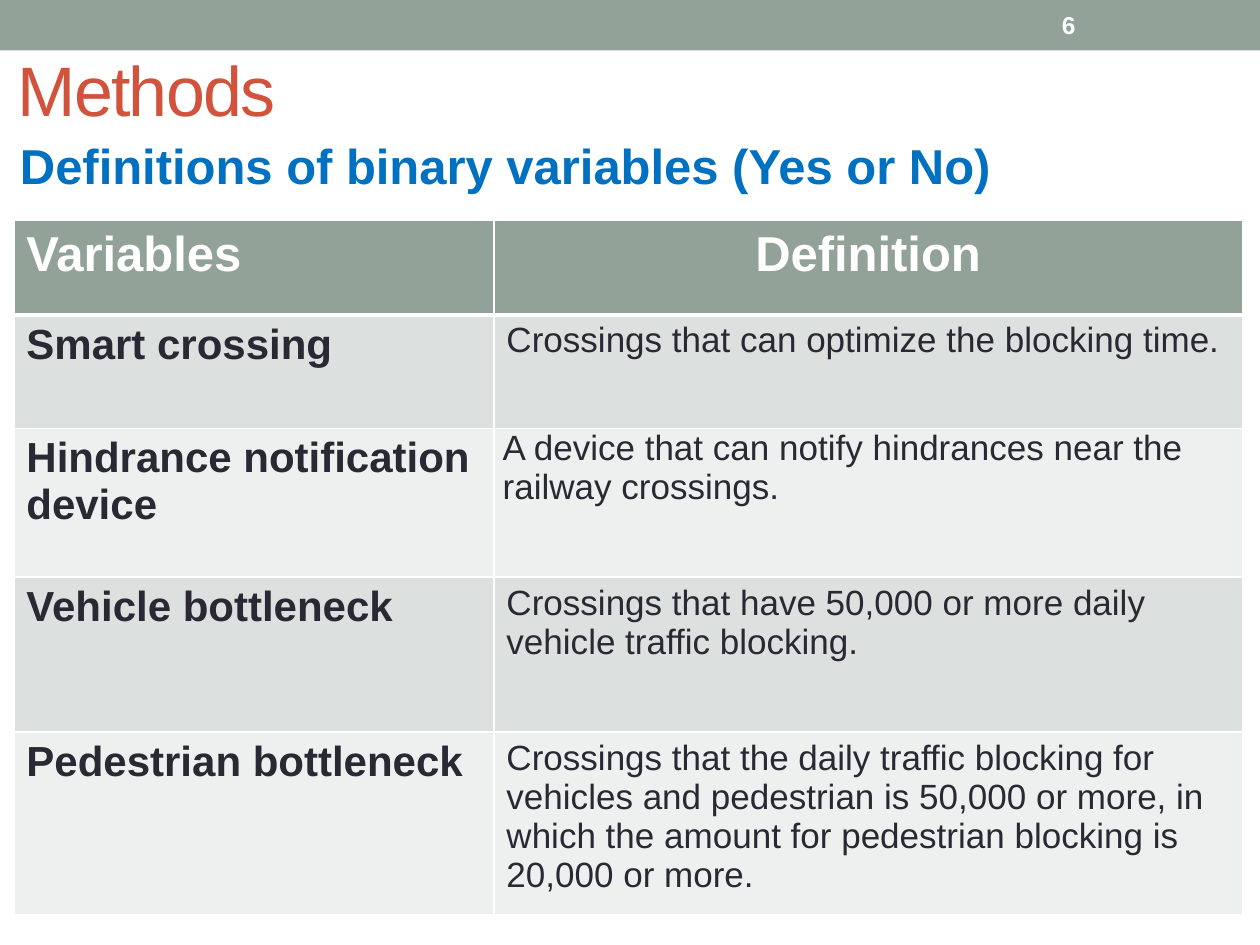
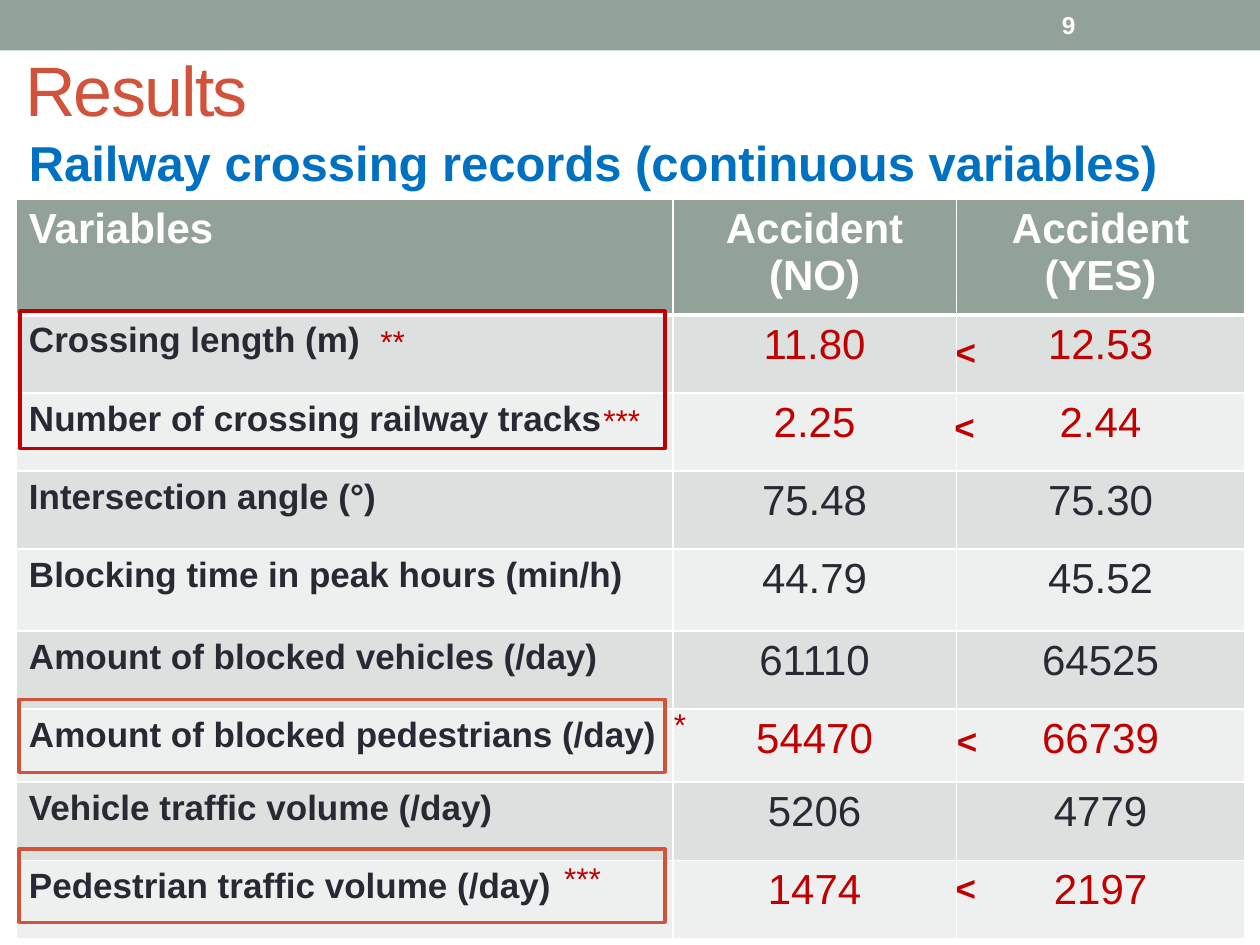
from dataclasses import dataclass

from lxml.etree import SubElement
from pptx import Presentation
from pptx.dml.color import RGBColor
from pptx.enum.shapes import MSO_SHAPE as Shape
from pptx.enum.text import MSO_ANCHOR as Anchor, MSO_AUTO_SIZE as AutoSize, PP_ALIGN as Align
from pptx.oxml.ns import qn
from pptx.util import Inches, Pt

FONT = "Arial"
SAGE, RUST, BLUE, RED = "93A299", "D2533C", "0070C0", "C00000"
INK, WHITE = "292934", "FFFFFF"
ROW_FILLS = ("EEF0EF", "DCE0DE")


@dataclass(frozen=True)
class Box:
    left: float
    top: float
    width: float
    height: float

    def emu(self) -> tuple:
        return tuple(Inches(v) for v in (self.left, self.top, self.width, self.height))


@dataclass(frozen=True)
class Style:
    size: float
    color: str
    bold: bool = False
    align: Align = Align.LEFT


@dataclass(frozen=True)
class Column:
    width: float
    header: Style
    body: Style


@dataclass(frozen=True)
class Mark:
    text: str
    box: Box
    style: Style


@dataclass(frozen=True)
class Frame:
    color: str
    box: Box


def rgb(color: str) -> RGBColor:
    return RGBColor.from_string(color)


def write(tf, text: str, style: Style) -> None:
    tf.text = text
    for p in tf.paragraphs:
        p.alignment = style.align
        for r in p.runs:
            r.font.name = FONT
            r.font.size = Pt(style.size)
            r.font.bold = style.bold
            r.font.color.rgb = rgb(style.color)


def add_text(slide, text: str, box: Box, style: Style, anchor: Anchor = Anchor.TOP) -> None:
    tf = slide.shapes.add_textbox(*box.emu()).text_frame
    tf.word_wrap = True
    tf.vertical_anchor = anchor
    write(tf, text, style)


def add_rect(slide, box: Box, fill: str = "", line: str = "") -> None:
    sp = slide.shapes.add_shape(Shape.RECTANGLE, *box.emu())
    sp.shadow.inherit = False
    if fill:
        sp.fill.solid()
        sp.fill.fore_color.rgb = rgb(fill)
    else:
        sp.fill.background()
    if line:
        sp.line.color.rgb = rgb(line)
        sp.line.width = Pt(2)
    else:
        sp.line.fill.background()


def set_borders(cell, top: float, bottom: float) -> None:
    tc_pr = cell._tc.get_or_add_tcPr()
    widths = {"a:lnL": 1, "a:lnR": 1, "a:lnT": top, "a:lnB": bottom}
    for i, (tag, width) in enumerate(widths.items()):
        ln = SubElement(tc_pr, qn(tag), w=str(Pt(width)))
        fill = SubElement(ln, qn("a:solidFill"))
        SubElement(fill, qn("a:srgbClr"), val=WHITE)
        tc_pr.insert(i, ln)


def add_table(slide, left: float, top: float, columns: list[Column], heights: list[float],
              rows: list[tuple], red_rows: tuple = ()):
    box = Box(left, top, sum(c.width for c in columns), sum(heights))
    table = slide.shapes.add_table(len(rows), len(columns), *box.emu()).table
    table.horz_banding = False
    for col, column in zip(table.columns, columns):
        col.width = Inches(column.width)
    for i, (height, row) in enumerate(zip(heights, rows)):
        table.rows[i].height = Inches(height)
        for j, (column, text) in enumerate(zip(columns, row)):
            cell = table.cell(i, j)
            style = column.body if i else column.header
            if i in red_rows and j:
                style = Style(style.size, RED, style.bold, style.align)
            write(cell.text_frame, text, style)
            cell.fill.solid()
            cell.fill.fore_color.rgb = rgb(ROW_FILLS[i % 2] if i else SAGE)
            set_borders(cell, 3 if i == 1 else 1, 1 if i else 3)
    return table


def add_slide(prs, number: str, title: str, title_box: Box, subtitle: str, subtitle_box: Box):
    slide = prs.slides.add_slide(prs.slide_layouts.get_by_name("Title Only"))
    add_rect(slide, Box(0, 0, 10, 0.4), fill=SAGE)
    sp = slide.shapes.title
    sp.left, sp.top, sp.width, sp.height = title_box.emu()
    tf = sp.text_frame
    tf.auto_size = AutoSize.NONE
    tf.vertical_anchor = Anchor.MIDDLE
    write(tf, title, Style(40, RUST))
    for r in tf.paragraphs[0].runs:
        r._r.get_or_add_rPr().set("spc", "-100")
    add_text(slide, number, Box(8.33, 0.02, 1.17, 0.36), Style(14, WHITE, True), Anchor.MIDDLE)
    add_text(slide, subtitle, subtitle_box, Style(28, BLUE, True))
    return slide


def build_methods(prs) -> None:
    slide = add_slide(prs, "6", "Methods", Box(0.04, 0.16, 9, 1.09),
                      "Definitions of binary variables (Yes or No)", Box(0.06, 1.03, 9.08, 0.57))
    columns = [
        Column(3.81, Style(28, WHITE, True), Style(24, INK, True)),
        Column(5.94, Style(28, WHITE, True, Align.CENTER), Style(20, INK)),
    ]
    rows = [
        ("Variables", "Definition"),
        ("Smart crossing", "Crossings that can optimize the blocking time."),
        ("Hindrance notification device",
         "A device that can notify hindrances near the railway crossings."),
        ("Vehicle bottleneck",
         "Crossings that have 50,000 or more daily vehicle traffic blocking."),
        ("Pedestrian bottleneck",
         "Crossings that the daily traffic blocking for vehicles and pedestrian is 50,000 or more, "
         "in which the amount for pedestrian blocking is 20,000 or more."),
    ]
    table = add_table(slide, 0.11, 1.75, columns, [0.75, 0.9, 1.18, 1.23, 1.45], rows)
    device = table.cell(2, 1)
    device.margin_left = device.margin_right = Inches(0.07)
    device.margin_top = device.margin_bottom = 0


def build_results(prs) -> None:
    slide = add_slide(prs, "9", "Results", Box(0.1, 0.27, 7.62, 0.86),
                      "Railway crossing records (continuous variables)", Box(0.13, 1, 9.62, 0.57))
    header = Style(24, WHITE, True, Align.CENTER)
    value = Style(24, INK, False, Align.CENTER)
    columns = [
        Column(5.21, Style(24, WHITE, True), Style(20, INK, True)),
        Column(2.25, header, value),
        Column(2.29, header, value),
    ]
    rows = [
        ("Variables", "Accident (NO)", "Accident (YES)"),
        ("Crossing length (m)", "11.80", "12.53"),
        ("Number of crossing railway tracks", "2.25", "2.44"),
        ("Intersection angle (°)", "75.48", "75.30"),
        ("Blocking time in peak hours (min/h)", "44.79", "45.52"),
        ("Amount of blocked vehicles (/day)", "61110", "64525"),
        ("Amount of blocked pedestrians (/day)", "54470", "66739"),
        ("Vehicle traffic volume (/day)", "5206", "4779"),
        ("Pedestrian traffic volume (/day)", "1474", "2197"),
    ]
    heights = [0.92, 0.62, 0.62, 0.62, 0.65, 0.62, 0.58, 0.62, 0.62]
    add_table(slide, 0.13, 1.58, columns, heights, rows, red_rows=(1, 2, 6, 8))

    less = Style(20, RED, True, Align.CENTER)
    stars = Style(18, RED)
    frames = [
        Frame(RED, Box(0.16, 2.47, 5.12, 1.09)),
        Frame(RUST, Box(0.15, 5.55, 5.13, 0.58)),
        Frame(RUST, Box(0.15, 6.74, 5.13, 0.58)),
    ]
    marks = [
        Mark("<", Box(7.08, 2.57, 1.17, 0.44), less),
        Mark("<", Box(7.03, 3.17, 1.25, 0.44), less),
        Mark("<", Box(7.05, 5.66, 1.25, 0.44), less),
        Mark("<", Box(7.04, 6.83, 1.25, 0.44), less),
        Mark("**", Box(2.92, 2.51, 0.5, 0.37), stars),
        Mark("***", Box(4.69, 3.13, 0.56, 0.4), stars),
        Mark("*", Box(5.25, 5.55, 0.56, 0.4), stars),
        Mark("***", Box(4.38, 6.77, 0.56, 0.4), stars),
    ]
    for frame in frames:
        add_rect(slide, frame.box, line=frame.color)
    for mark in marks:
        add_text(slide, mark.text, mark.box, mark.style)


def main() -> None:
    prs = Presentation()
    prs.slide_width, prs.slide_height = Inches(10), Inches(7.5)
    build_methods(prs)
    build_results(prs)
    prs.save("out.pptx")


if __name__ == "__main__":
    main()
